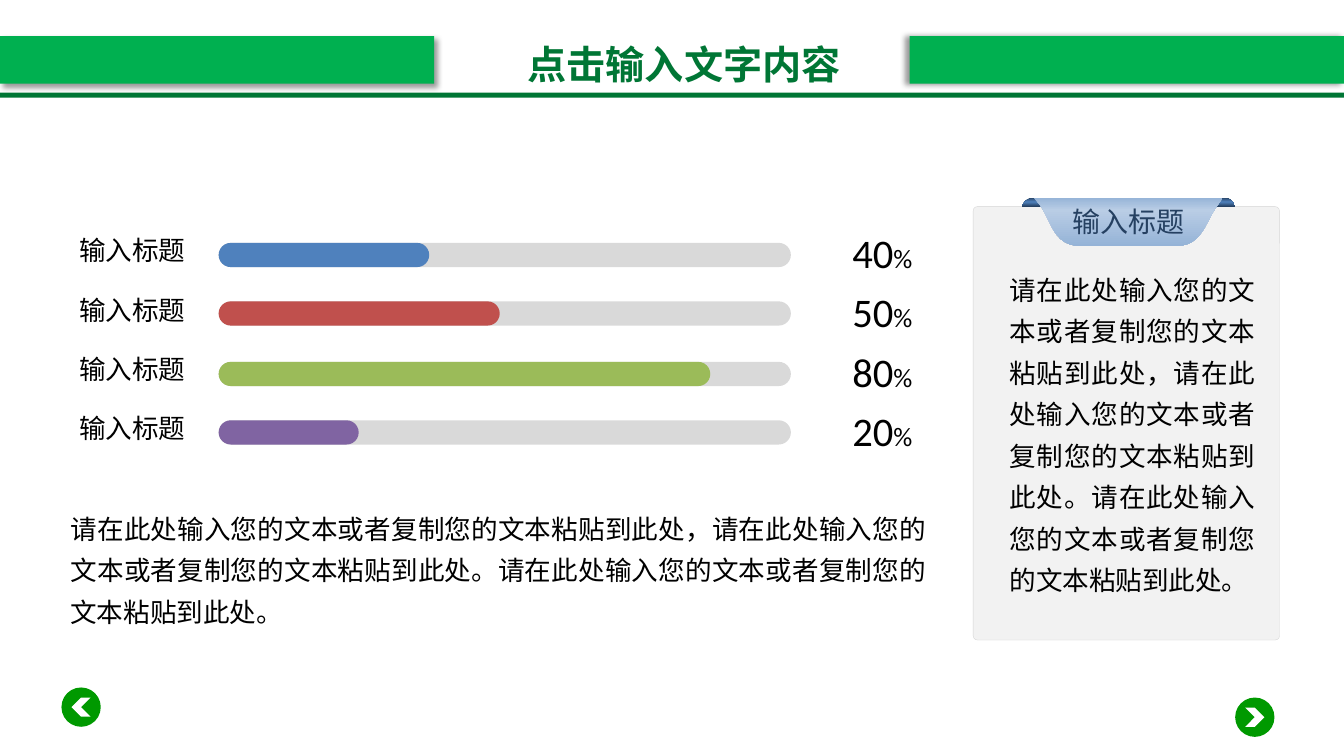
from dataclasses import dataclass
from lxml import etree
from pptx import Presentation
from pptx.dml.color import RGBColor
from pptx.enum.shapes import MSO_SHAPE
from pptx.enum.text import MSO_ANCHOR, MSO_AUTO_SIZE, PP_ALIGN
from pptx.oxml.ns import qn
from pptx.util import Inches, Pt

RECT, ROUND = MSO_SHAPE.RECTANGLE, MSO_SHAPE.ROUNDED_RECTANGLE
OVAL, CHEVRON = MSO_SHAPE.OVAL, MSO_SHAPE.CHEVRON
TOP, MIDDLE = MSO_ANCHOR.TOP, MSO_ANCHOR.MIDDLE
LEFT, CENTER, RIGHT, JUSTIFY = PP_ALIGN.LEFT, PP_ALIGN.CENTER, PP_ALIGN.RIGHT, PP_ALIGN.JUSTIFY
GROW = MSO_AUTO_SIZE.SHAPE_TO_FIT_TEXT


@dataclass(frozen=True)
class Theme:
    band: str = "00B050"
    accent: str = "007635"
    button: str = "009900"
    white: str = "FFFFFF"
    black: str = "000000"
    track: str = "D9D9D9"
    panel: str = "F2F2F2"
    panel_edge: str = "D5D5D5"
    navy: str = "254061"
    fold: tuple = ((0, "254061"), (49, "4F81BD"), (100, "254061"))
    ribbon: tuple = ((0, "95B3D7"), (26, "B9CDE5"), (100, "95B3D7"))
    chinese: str = "Noto Sans CJK SC"
    number: str = "Calibri"
    body: str = "Arial"
    title_size: int = 28
    number_size: int = 29
    ribbon_size: int = 20
    text_size: int = 19


THEME = Theme()
LABEL = "输入标题"
SENTENCE = "请在此处输入您的文本或者复制您的文本粘贴到此处"
BODY = f"{SENTENCE}，{SENTENCE}。{SENTENCE}。"
BARS = [
    ("40", 2.09, 2.41, "4F81BD"),
    ("50", 2.79, 2.99, "C0504D"),
    ("80", 4.88, 3.59, "9BBB59"),
    ("20", 1.39, 4.17, "8064A2"),
]
LEFT_FOLD = [
    (10.24, 1.96), (10.28, 1.96), (10.29, 1.97),
    (10.33, 1.98, 10.36, 2.01, 10.37, 2.04), (10.37, 2.05), (10.14, 2.05),
    (10.15, 2.04), (10.16, 2.01, 10.19, 1.98, 10.22, 1.97),
]
RIGHT_FOLD = [
    (12.14, 1.96), (12.16, 1.96), (12.19, 1.97),
    (12.22, 1.98, 12.24, 2.01, 12.26, 2.04), (12.26, 2.05), (12.05, 2.05),
    (12.05, 2.04), (12.06, 2.01, 12.09, 1.98, 12.12, 1.97),
]
RIBBON = [
    (10.26, 1.96), (12.14, 1.96), (12.09, 2.03),
    (11.96, 2.2, 11.94, 2.44, 11.67, 2.44), (10.73, 2.44),
    (10.45, 2.44, 10.44, 2.19, 10.32, 2.03),
]


def style_run(run, font, size, color, bold=False):
    run.font.name = font
    run.font.size = Pt(size)
    run.font.bold = bold
    run.font.color.rgb = RGBColor.from_string(color)
    properties = run._r.get_or_add_rPr()
    east_asian = etree.Element(qn("a:ea"), typeface=THEME.chinese)
    properties.find(qn("a:latin")).addnext(east_asian)


def set_frame(box, anchor, insets=(0.12, 0.06), wrap=True):
    frame = box.text_frame
    frame.word_wrap = wrap
    frame.vertical_anchor = anchor
    frame.margin_left = frame.margin_right = Inches(insets[0])
    frame.margin_top = frame.margin_bottom = Inches(insets[1])
    return frame


def add_text(page, area, text, align, anchor=MIDDLE, font=THEME.chinese):
    box = page.shapes.add_textbox(*map(Inches, area))
    para = set_frame(box, anchor).paragraphs[0]
    para.text = text
    para.alignment = align
    style_run(para.runs[0], font, THEME.text_size, THEME.black)
    return para


def add_body(page, area):
    para = add_text(page, area, BODY, JUSTIFY, TOP, THEME.body)
    para.line_spacing = 1.3
    para.space_after = Pt(7.2)


def add_percent(page, area, number):
    box = page.shapes.add_textbox(*map(Inches, area))
    para = set_frame(box, MIDDLE, (0, 0)).paragraphs[0]
    para.alignment = LEFT
    for text, size in ((number, THEME.number_size), ("%", THEME.text_size)):
        run = para.add_run()
        run.text = text
        style_run(run, THEME.number, size, THEME.black)


def add_block(page, kind, area, color, rounding=None):
    block = page.shapes.add_shape(kind, *map(Inches, area))
    block.shadow.inherit = False
    block.fill.solid()
    block.fill.fore_color.rgb = RGBColor.from_string(color)
    block.line.fill.background()
    if rounding is not None:
        block.adjustments[0] = rounding
    return block


def add_band(page, left, shadow_angle):
    band = add_block(page, RECT, (left, 0.36, 4.31, 0.47), THEME.band)
    effects = band._element.spPr.find(qn("a:effectLst"))
    shadow = etree.SubElement(
        effects, qn("a:outerShdw"), blurRad=str(Pt(4)), dist=str(Pt(3)),
        dir=str(shadow_angle * 60000), algn="ctr", rotWithShape="0")
    color = etree.SubElement(shadow, qn("a:srgbClr"), val=THEME.black)
    etree.SubElement(color, qn("a:alpha"), val="40000")


def add_button(page, left, top, backward=False):
    add_block(page, OVAL, (left, top, 0.39, 0.39), THEME.button)
    arrow = add_block(page, CHEVRON, (left + 0.1, top + 0.1, 0.19, 0.19), THEME.white)
    if backward:
        arrow._element.spPr.find(qn("a:xfrm")).set("flipH", "1")


def curve_points(start, curve, steps=12):
    corners = [start, curve[:2], curve[2:4], curve[4:]]
    for step in range(1, steps + 1):
        t = step / steps
        weights = ((1 - t) ** 3, 3 * t * (1 - t) ** 2, 3 * t * t * (1 - t), t ** 3)
        yield tuple(sum(w * c[axis] for w, c in zip(weights, corners)) for axis in (0, 1))


def add_outline(page, segments, stops):
    points = [segments[0]]
    for segment in segments[1:]:
        points.extend([segment] if len(segment) == 2 else curve_points(points[-1], segment))
    places = [(Inches(x), Inches(y)) for x, y in points]
    builder = page.shapes.build_freeform(*places[0])
    builder.add_line_segments(places[1:], close=True)
    outline = builder.convert_to_shape()
    outline.shadow.inherit = False
    outline.line.fill.background()
    outline.fill.gradient()
    gradient = outline._element.spPr.find(qn("a:gradFill"))
    gradient.find(qn("a:lin")).set("ang", "5400000")
    stop_list = gradient.find(qn("a:gsLst"))
    for stop in list(stop_list):
        stop_list.remove(stop)
    for position, color in stops:
        stop = etree.SubElement(stop_list, qn("a:gs"), pos=str(position * 1000))
        etree.SubElement(stop, qn("a:srgbClr"), val=color)
    return outline


def add_title(page):
    title = page.shapes.title
    title.left, title.top, title.width, title.height = map(Inches, (5.12, 0.35, 3.34, 0.57))
    frame = set_frame(title, TOP, (0.1, 0.05), wrap=False)
    frame.auto_size = GROW
    frame.text = "点击输入文字内容"
    frame.paragraphs[0].alignment = CENTER
    style_run(frame.paragraphs[0].runs[0], THEME.chinese, THEME.title_size, THEME.accent, True)


def add_bars(page):
    for row, (number, width, top, color) in enumerate(BARS):
        offset = row * 0.59
        add_block(page, ROUND, (2.17, top, 5.68, 0.24), THEME.track, 0.5)
        add_block(page, ROUND, (2.17, top, width, 0.24), color, 0.5)
        add_text(page, (0.63, 2.28 + offset, 1.33, 0.4), LABEL, RIGHT)
        add_percent(page, (8.46, 2.31 + offset, 1.05, 0.38), number)


def add_panel(page):
    panel = add_block(page, ROUND, (9.66, 2.05, 3.04, 4.3), THEME.panel, 0.014)
    panel.line.color.rgb = RGBColor.from_string(THEME.panel_edge)
    panel.line.width = Pt(0.25)
    for fold in (LEFT_FOLD, RIGHT_FOLD):
        add_outline(page, fold, THEME.fold)
    ribbon = add_outline(page, RIBBON, THEME.ribbon)
    para = set_frame(ribbon, MIDDLE).paragraphs[0]
    para.text = LABEL
    para.alignment = CENTER
    style_run(para.runs[0], THEME.chinese, THEME.ribbon_size, THEME.navy)
    add_body(page, (9.9, 2.56, 2.68, 3.64))


def main():
    deck = Presentation()
    deck.slide_width, deck.slide_height = Inches(13.34), Inches(7.5)
    page = deck.slides.add_slide(deck.slide_layouts[5])
    add_band(page, 0, 45)
    add_band(page, 9.03, 180)
    add_block(page, RECT, (0, 0.92, 13.34, 0.05), THEME.accent)
    add_title(page)
    add_button(page, 0.61, 6.82, backward=True)
    add_button(page, 12.26, 6.92)
    add_bars(page)
    add_body(page, (0.58, 4.93, 8.74, 1.39))
    add_panel(page)
    deck.save("out.pptx")


if __name__ == "__main__":
    main()
